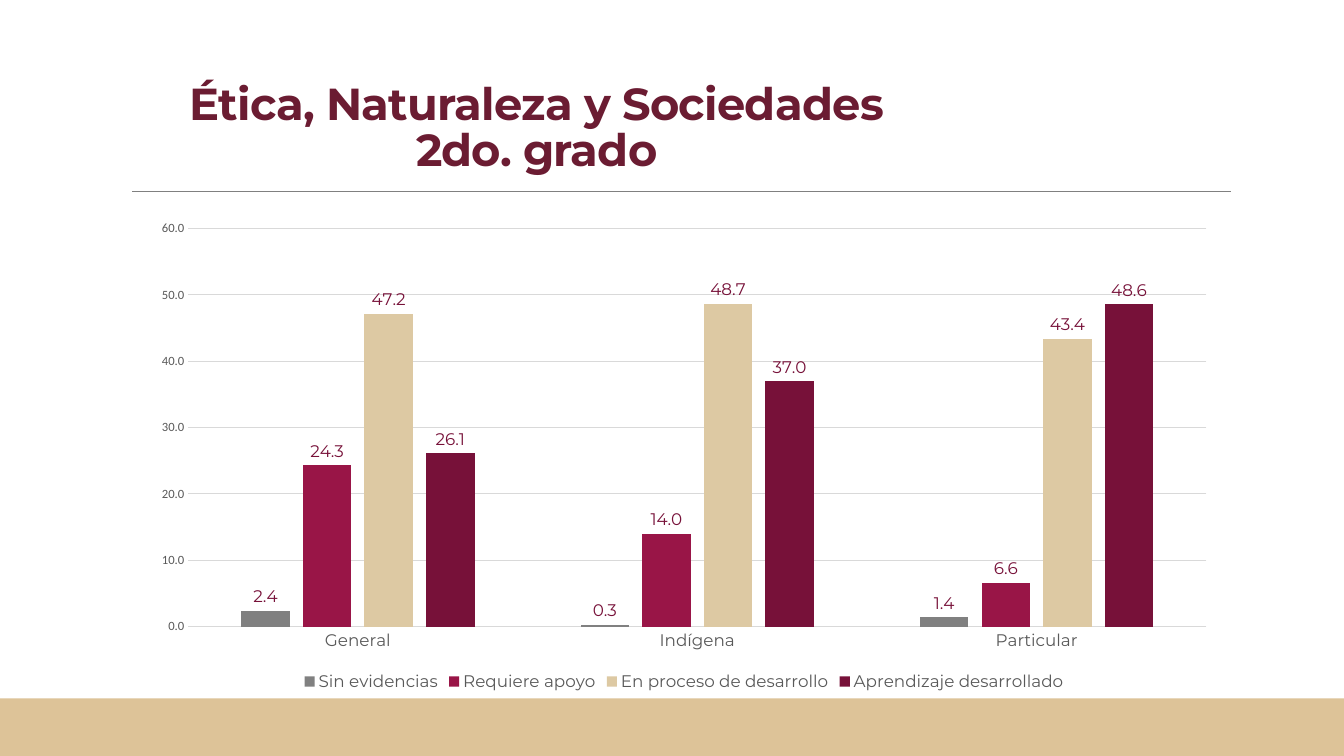
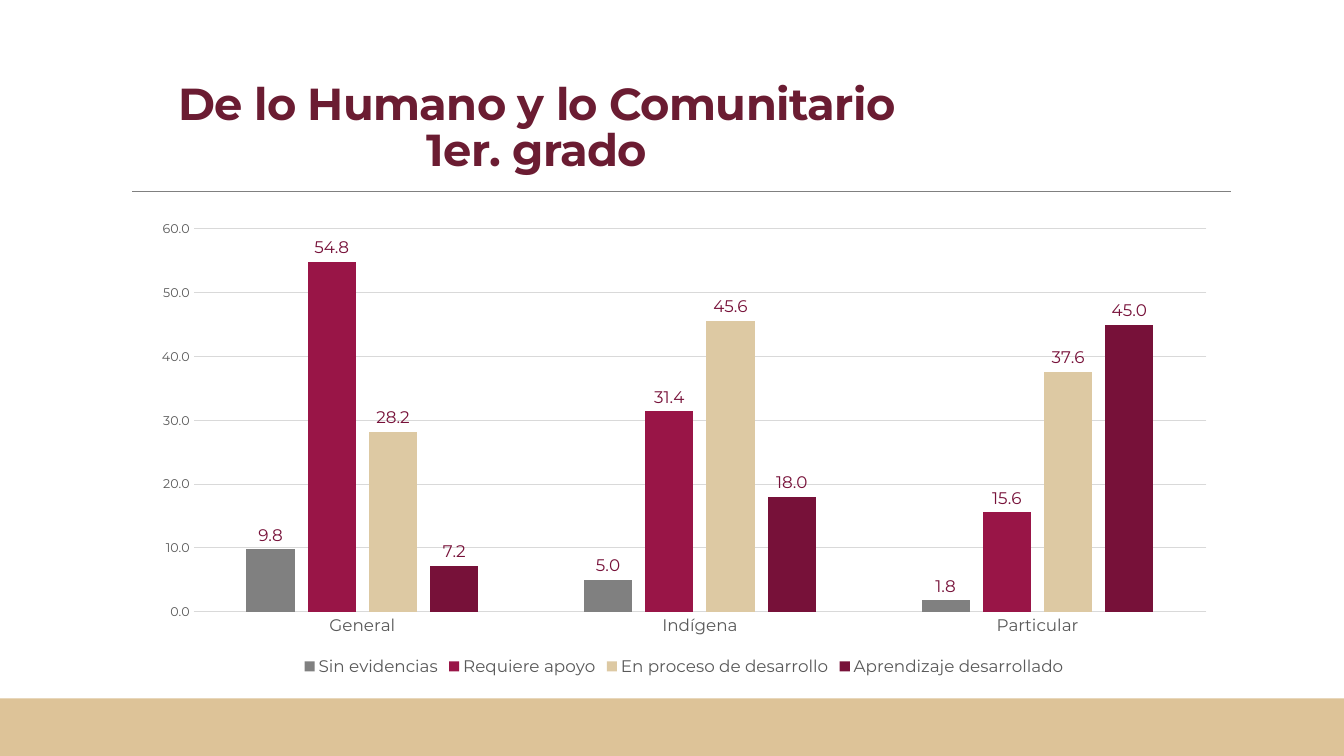
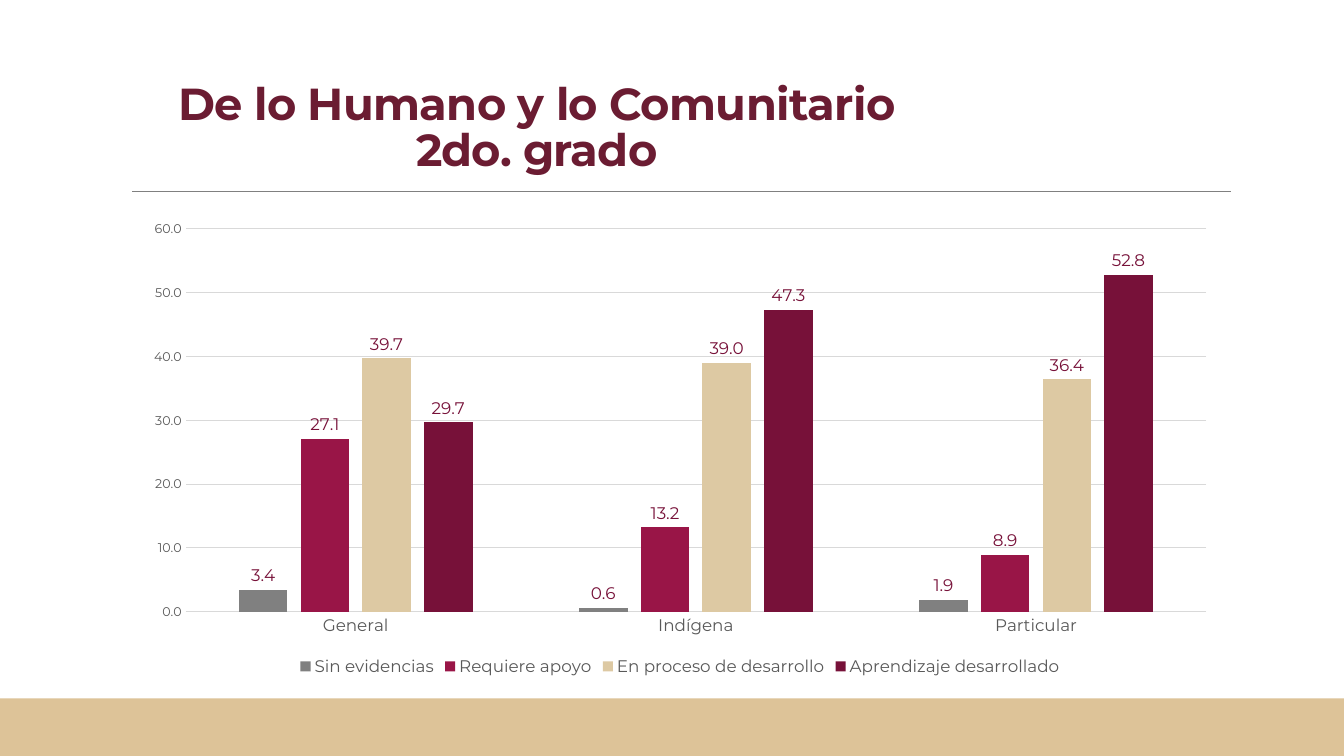
"""Build three slides of learning results by school type."""
import pptx
import pptx.chart.data
import pptx.dml.color
import pptx.enum.chart
import pptx.enum.shapes
import pptx.enum.text
import pptx.util
from pptx.util import Inches, Pt

FONT = "Montserrat"
HUES = {
    "title": "6B1C32",
    "band": "DDC398",
    "rule": "808080",
    "grid": "D9D9D9",
    "text": "595959",
    "label": "771139",
}
KINDS = ["General", "Indígena", "Particular"]
LEVELS = {
    "Sin evidencias": "808080",
    "Requiere apoyo": "991547",
    "En proceso de desarrollo": "DDC9A3",
    "Aprendizaje desarrollado": "771139",
}
RIGHT, TOP = 12.18, 2.1
PAGES = [
    {
        "title": ("Ética, Naturaleza y Sociedades", "2do. grado"),
        "left": 1.39, "height": 4.8, "font": "Calibri",
        "rows": [(2.4, 0.3, 1.4), (24.3, 14, 6.6),
                 (47.2, 48.7, 43.4), (26.1, 37, 48.6)],
    },
    {
        "title": ("De lo Humano y lo Comunitario", "1er. grado"),
        "left": 1.39, "height": 4.65, "font": FONT,
        "rows": [(9.8, 5, 1.8), (54.8, 31.4, 15.6),
                 (28.2, 45.6, 37.6), (7.2, 18, 45)],
    },
    {
        "title": ("De lo Humano y lo Comunitario", "2do. grado"),
        "left": 1.31, "height": 4.65, "font": FONT,
        "rows": [(3.4, 0.6, 1.9), (27.1, 13.2, 8.9),
                 (39.7, 39, 36.4), (29.7, 47.3, 52.8)],
    },
]


def rgb(code):
    """Turn a hex string into a colour."""
    return pptx.dml.color.RGBColor.from_string(code)


def set_font(font, size, hue, name=FONT, bold=False):
    """Set the size, colour, face and weight of a font."""
    font.size, font.name, font.bold = Pt(size), name, bold
    font.color.rgb = rgb(HUES[hue])


def set_line(line, hue, width):
    """Set the colour and width of a line."""
    line.color.rgb = rgb(HUES[hue])
    line.width = Pt(width)


def add_frame(slide):
    """Draw the rule under the title and the band at the foot."""
    rule = slide.shapes.add_connector(
        pptx.enum.shapes.MSO_CONNECTOR.STRAIGHT,
        Inches(1.31), Inches(1.9), Inches(12.21), Inches(1.9))
    set_line(rule.line, "rule", 0.5)
    props = rule._element.spPr
    props.append(pptx.oxml.parse_xml(
        '<a:effectLst xmlns:a='
        '"http://schemas.openxmlformats.org/drawingml/2006/main"/>'))
    band = slide.shapes.add_shape(
        pptx.enum.shapes.MSO_SHAPE.RECTANGLE,
        Inches(0), Inches(6.93), Inches(13.33), Inches(0.57))
    band.shadow.inherit = False
    band.fill.solid()
    band.fill.fore_color.rgb = rgb(HUES["band"])
    band.line.fill.background()


def add_title(slide, lines):
    """Write the title in two centred lines."""
    box = slide.shapes.add_textbox(
        Inches(1), Inches(0.76), Inches(8.65), Inches(1.06))
    frame = box.text_frame
    frame.word_wrap = True
    frame.vertical_anchor = pptx.enum.text.MSO_ANCHOR.MIDDLE
    para = frame.paragraphs[0]
    para.text = "\v".join(lines)
    para.alignment = pptx.enum.text.PP_ALIGN.CENTER
    para.line_spacing = 0.85
    for run in para.runs:
        set_font(run.font, 32, "title", bold=True)
        run._r.get_or_add_rPr().set("spc", "-50")


def add_bars(slide, page):
    """Draw the clustered columns of a page."""
    data = pptx.chart.data.CategoryChartData(number_format="0.0")
    data.categories = KINDS
    for name, row in zip(LEVELS, page["rows"]):
        data.add_series(name, row)
    chart = slide.shapes.add_chart(
        pptx.enum.chart.XL_CHART_TYPE.COLUMN_CLUSTERED,
        Inches(page["left"]), Inches(TOP),
        Inches(RIGHT - page["left"]), Inches(page["height"]), data).chart
    chart.has_title = False
    set_font(chart.font, 12, "text")
    chart.has_legend = True
    chart.legend.position = pptx.enum.chart.XL_LEGEND_POSITION.BOTTOM
    chart.legend.include_in_layout = False
    set_font(chart.legend.font, 12, "text")

    for axis in (chart.category_axis, chart.value_axis):
        axis.major_tick_mark = pptx.enum.chart.XL_TICK_MARK.NONE
        axis.minor_tick_mark = pptx.enum.chart.XL_TICK_MARK.NONE
    base, scale = chart.category_axis, chart.value_axis
    set_font(base.tick_labels.font, 12, "text")
    set_line(base.format.line, "grid", 0.75)
    set_font(scale.tick_labels.font, 9, "text", page["font"])
    scale.tick_labels.number_format = "0.0"
    scale.tick_labels.number_format_is_linked = False
    scale.minimum_scale, scale.maximum_scale, scale.major_unit = 0, 60, 10
    scale.format.line.fill.background()
    set_line(scale.major_gridlines.format.line, "grid", 0.75)

    plot = chart.plots[0]
    plot.vary_by_categories = False
    plot.gap_width, plot.overlap = 219, -27
    for bars, hue in zip(plot.series, LEVELS.values()):
        bars.format.fill.solid()
        bars.format.fill.fore_color.rgb = rgb(hue)
        labels = bars.data_labels
        labels.show_value = True
        labels.position = pptx.enum.chart.XL_LABEL_POSITION.OUTSIDE_END
        labels.number_format = "0.0"
        labels.number_format_is_linked = False
        set_font(labels.font, 12, "label")


def main():
    """Build and save the deck."""
    deck = pptx.Presentation()
    deck.slide_width, deck.slide_height = Inches(13.33), Inches(7.5)
    for page in PAGES:
        slide = deck.slides.add_slide(deck.slide_layouts[6])
        add_frame(slide)
        add_title(slide, page["title"])
        add_bars(slide, page)
    deck.save("out.pptx")


if __name__ == "__main__":
    main()
